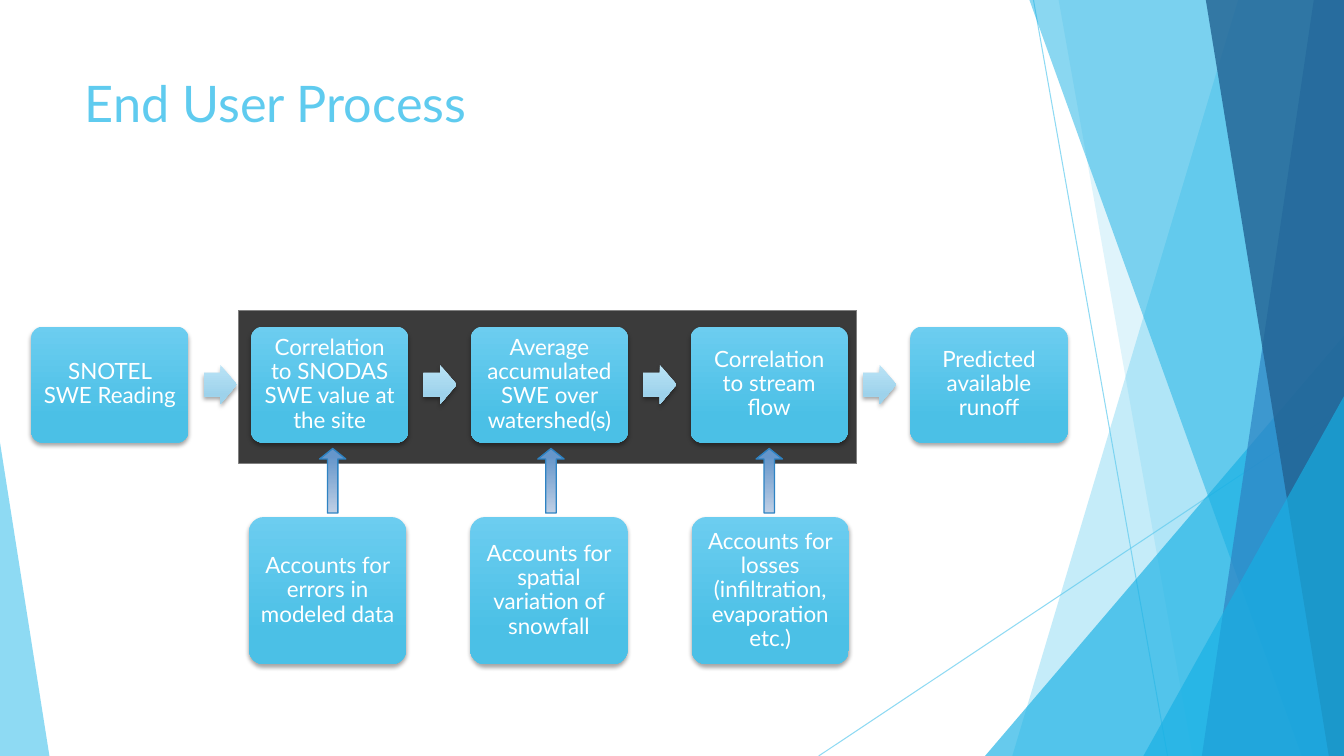
from lxml.etree import SubElement
from pptx import Presentation
from pptx.dml.color import RGBColor
from pptx.enum.shapes import MSO_CONNECTOR, MSO_SHAPE
from pptx.enum.text import MSO_ANCHOR, PP_ALIGN
from pptx.oxml.ns import qn
from pptx.util import Inches, Pt

SKY = RGBColor(0x5F, 0xCB, 0xEF)
CYAN = RGBColor(0x17, 0xB0, 0xE4)
BLUE = RGBColor(0x2E, 0x83, 0xC3)
NAVY = RGBColor(0x22, 0x62, 0x92)
WHITE = RGBColor(0xFF, 0xFF, 0xFF)
DARK = RGBColor(0x3B, 0x3B, 0x3B)
GRAY = RGBColor(0x80, 0x80, 0x80)
# Each fade is a pair of gradient stops, from top to bottom
BOX_FADE = [(0, RGBColor(0x6C, 0xCD, 0xF0)), (0.78, RGBColor(0x4B, 0xC0, 0xE6))]
STEP_FADE = [(0, RGBColor(0xBA, 0xE3, 0xF6)), (0.78, RGBColor(0x9D, 0xD2, 0xEB))]
RISE_FADE = [(0.12, RGBColor(0x65, 0x96, 0xCA)), (1, RGBColor(0xBF, 0xCF, 0xE5))]

FONT = "Lato"
WIDE, HIGH = 13.33, 7.5
TITLE = "End User Process"
STEPS = [
    "SNOTEL SWE Reading",
    "Correlation to SNODAS SWE value at the site",
    "Average accumulated SWE over watershed(s)",
    "Correlation to stream flow",
    "Predicted available runoff",
]
NOTES = [
    "Accounts for errors in modeled data",
    "Accounts for spatial variation of snowfall",
    "Accounts for losses (infiltration, evaporation etc.)",
]
RAYS = [(10.25, 0, 11.58, HIGH), (WIDE, 4.03, 8.12, HIGH)]
# Bands run to the right edge: top left x, bottom left x, colour, opacity.
# Corners are triangles: left, top, width, peak (0 left, 1 right), colour, opacity.
SHARDS = [
    ("band", 12.28, 10.04, SKY, 36),
    ("band", 10.5, 11.83, SKY, 20),
    ("corner", 9.77, 3.33, 3.56, 1, CYAN, 66),
    ("band", 10.21, 12.91, CYAN, 50),
    ("band", 13.03, 11.92, BLUE, 70),
    ("band", 11.96, 13.18, NAVY, 80),
    ("corner", 11.34, 3.93, 1.99, 1, CYAN, 66),
    ("corner", 0, 4.39, 0.49, 0, SKY, 70),
]

deck = Presentation()
deck.slide_width, deck.slide_height = Inches(WIDE), Inches(HIGH)
slide = deck.slides.add_slide(deck.slide_layouts[5])
shapes = slide.shapes


def set_alpha(part, percent):
    color = next(part._element.spPr.iter(qn("a:srgbClr")))
    SubElement(color, qn("a:alpha"), val=str(percent * 1000))


def add_ray(x1, y1, x2, y2):
    ray = shapes.add_connector(
        MSO_CONNECTOR.STRAIGHT, Inches(x1), Inches(y1), Inches(x2), Inches(y2))
    ray.line.color.rgb = SKY
    ray.line.width = Pt(0.75)
    set_alpha(ray, 70)
    SubElement(ray._element.spPr, qn("a:effectLst"))


def add_part(kind, left, top, width, height, *adjust):
    part = shapes.add_shape(
        kind, Inches(left), Inches(top), Inches(width), Inches(height))
    for i, value in enumerate(adjust):
        part.adjustments[i] = value
    part.line.fill.background()
    part.shadow.inherit = False
    return part


def add_band(top_x, base_x):
    pen = shapes.build_freeform(Inches(top_x), 0)
    pen.add_line_segments(
        [(Inches(x), Inches(y)) for x, y in [(WIDE, 0), (WIDE, HIGH), (base_x, HIGH)]])
    band = pen.convert_to_shape()
    band.line.fill.background()
    band.shadow.inherit = False
    return band


def add_shard(kind, *data):
    *place, color, alpha = data
    if kind == "band":
        shard = add_band(*place)
    else:
        left, top, width, peak = place
        shard = add_part(
            MSO_SHAPE.ISOSCELES_TRIANGLE, left, top, width, HIGH - top, peak)
    shard.fill.solid()
    shard.fill.fore_color.rgb = color
    set_alpha(shard, alpha)


def set_fade(part, fade):
    part.fill.gradient()
    part.fill.gradient_angle = 270
    for stop, (place, color) in zip(part.fill.gradient_stops, fade):
        stop.position = place
        stop.color.rgb = color


def add_shadow(part):
    effects = part._element.spPr.find(qn("a:effectLst"))
    shade = SubElement(
        effects, qn("a:outerShdw"), blurRad=str(Pt(3)), dist=str(Pt(2)),
        dir="5400000", rotWithShape="0")
    color = SubElement(shade, qn("a:srgbClr"), val="000000")
    SubElement(color, qn("a:alpha"), val="35000")


def style_text(para, size, color, align):
    para.alignment = align
    font = para.runs[0].font
    font.name, font.size, font.color.rgb = FONT, Pt(size), color


def add_box(text, left, top, height):
    box = add_part(MSO_SHAPE.ROUNDED_RECTANGLE, left, top, 1.56, height, 0.1)
    set_fade(box, BOX_FADE)
    add_shadow(box)
    frame = box.text_frame
    frame.text = text
    frame.word_wrap = True
    frame.vertical_anchor = MSO_ANCHOR.MIDDLE
    frame.margin_left = frame.margin_right = Inches(0.07)
    frame.margin_top = frame.margin_bottom = Inches(0.07)
    para = frame.paragraphs[0]
    para.line_spacing = 0.9
    style_text(para, 16, WHITE, PP_ALIGN.CENTER)


for ray in RAYS:
    add_ray(*ray)
for shard in SHARDS:
    add_shard(*shard)

title = shapes.title
title.left, title.top = Inches(0.74), Inches(0.67)
title.width, title.height = Inches(9.4), Inches(1.44)
title.text_frame.text = TITLE
title.text_frame.vertical_anchor = MSO_ANCHOR.TOP
style_text(title.text_frame.paragraphs[0], 36, SKY, PP_ALIGN.LEFT)

panel = add_part(MSO_SHAPE.RECTANGLE, 2.37, 3.08, 6.13, 1.52)
panel.fill.solid()
panel.fill.fore_color.rgb = DARK
panel.line.color.rgb = GRAY
panel.line.width = Pt(0.75)

for i, text in enumerate(STEPS):
    left = 0.31 + 2.18 * i
    add_box(text, left, 3.24, 1.15)
    if i < len(STEPS) - 1:
        arrow = add_part(
            MSO_SHAPE.RIGHT_ARROW, left + 1.71, 3.62, 0.33, 0.39, 0.6, 0.5)
        set_fade(arrow, STEP_FADE)
        add_shadow(arrow)

for i, text in enumerate(NOTES):
    add_box(text, 2.47 + 2.195 * i, 5.13, 1.46)
    rise = add_part(
        MSO_SHAPE.UP_ARROW, 3.17 + 2.165 * i, 4.45, 0.26, 0.64, 0.4, 0.4)
    set_fade(rise, RISE_FADE)
    rise.line.color.rgb = BLUE
    rise.line.width = Pt(1)

deck.save("out.pptx")
